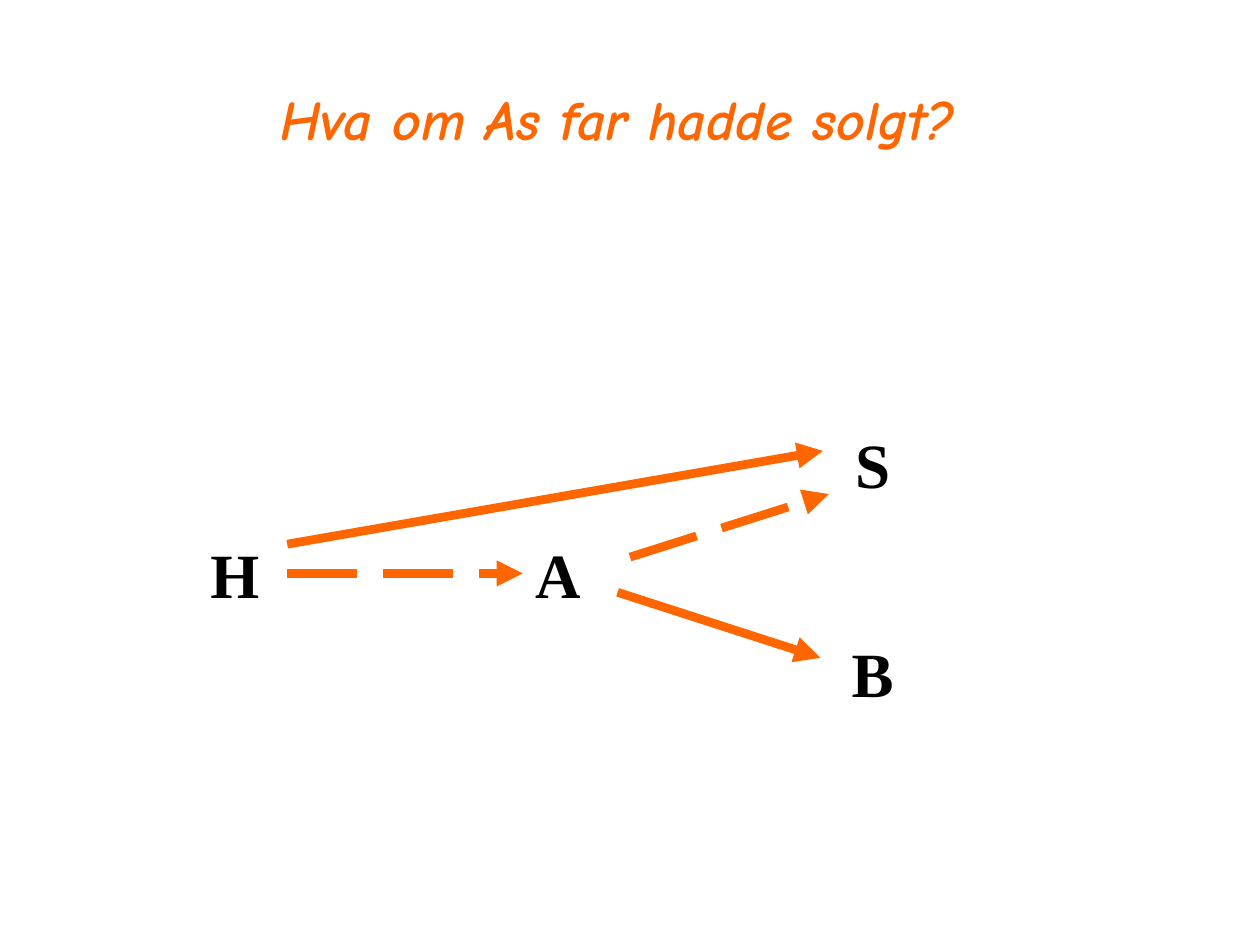
from lxml import etree
from pptx import Presentation
from pptx.dml.color import RGBColor
from pptx.enum.dml import MSO_LINE
from pptx.enum.shapes import MSO_CONNECTOR
from pptx.enum.text import MSO_ANCHOR, MSO_AUTO_SIZE, PP_ALIGN
from pptx.oxml.ns import qn
from pptx.util import Cm, Pt

STRAIGHT = MSO_CONNECTOR.STRAIGHT
LONG_DASH = MSO_LINE.LONG_DASH
MIDDLE = MSO_ANCHOR.MIDDLE
CENTER = PP_ALIGN.CENTER
LEFT = PP_ALIGN.LEFT
FIT_SHAPE = MSO_AUTO_SIZE.SHAPE_TO_FIT_TEXT
LEFT_SIDE = 1

COLORS = {"accent": "FF6600", "text": "000000", "background": "FFFFFF"}
TITLE = "Hva om As far hadde solgt?"
TITLE_BOX = (4.34, 1.73, 16.21, 1.47)
LETTER_HEIGHT = 1.78
# letter: left, top, width
LETTERS = {
    "H": (3.99, 10.67, 1.5),
    "A": (10.54, 10.67, 1.42),
    "S": (16.99, 8.46, 1.22),
    "B": (16.92, 12.67, 1.35),
}
# start, end, dashed, letter joined at its left side
ARROWS = [
    ((12.45, 11.94), (16.54, 13.26), False, None),
    ((5.79, 11.56), (10.54, 11.56), True, "A"),
    ((5.79, 10.97), (16.59, 9.09), False, None),
    ((12.7, 11.23), (16.71, 9.96), True, None),
]


def color(name):
    """Return the named colour."""
    return RGBColor.from_string(COLORS[name])


def write(shape, text, font_name, size, color_name, alignment):
    """Put one bold paragraph in a shape and return the paragraph."""
    frame = shape.text_frame
    frame.text = text
    frame.word_wrap = False
    frame.auto_size = FIT_SHAPE
    paragraph = frame.paragraphs[0]
    paragraph.alignment = alignment
    font = paragraph.font
    font.name, font.size, font.bold = font_name, Pt(size), True
    font.color.rgb = color(color_name)
    return paragraph


def add_title(slide):
    """Place and format the title."""
    title = slide.shapes.title
    title.left, title.top, title.width, title.height = map(Cm, TITLE_BOX)
    title.fill.solid()
    title.fill.fore_color.rgb = color("background")
    paragraph = write(title, TITLE, "Comic Neue", 32, "accent", CENTER)
    paragraph.font.italic = True
    paragraph.line_spacing = 0.9
    title.text_frame.vertical_anchor = MIDDLE


def add_letter(slide, letter, box):
    """Add one lettered party and return its text box."""
    shape = slide.shapes.add_textbox(*map(Cm, (*box, LETTER_HEIGHT)))
    write(shape, letter, "Times New Roman", 36, "text", LEFT)
    return shape


def add_arrow(slide, start, end, dashed, target):
    """Add an arrow, joined to the target's left side if there is one."""
    arrow = slide.shapes.add_connector(STRAIGHT, *map(Cm, (*start, *end)))
    if target is not None:
        arrow.end_connect(target, LEFT_SIDE)
    arrow.line.color.rgb = color("accent")
    arrow.line.width = Pt(5)
    if dashed:
        arrow.line.dash_style = LONG_DASH
    properties = arrow._element.spPr
    etree.SubElement(properties.find(qn("a:ln")), qn("a:tailEnd"), type="triangle")
    etree.SubElement(properties, qn("a:effectLst"))


def main():
    """Build and save the slide."""
    presentation = Presentation()
    presentation.slide_width, presentation.slide_height = Cm(25.4), Cm(19.05)
    slide = presentation.slides.add_slide(presentation.slide_layouts[5])
    add_title(slide)
    letters = {letter: add_letter(slide, letter, box) for letter, box in LETTERS.items()}
    for start, end, dashed, target in ARROWS:
        add_arrow(slide, start, end, dashed, letters.get(target))
    presentation.save("out.pptx")


if __name__ == "__main__":
    main()
